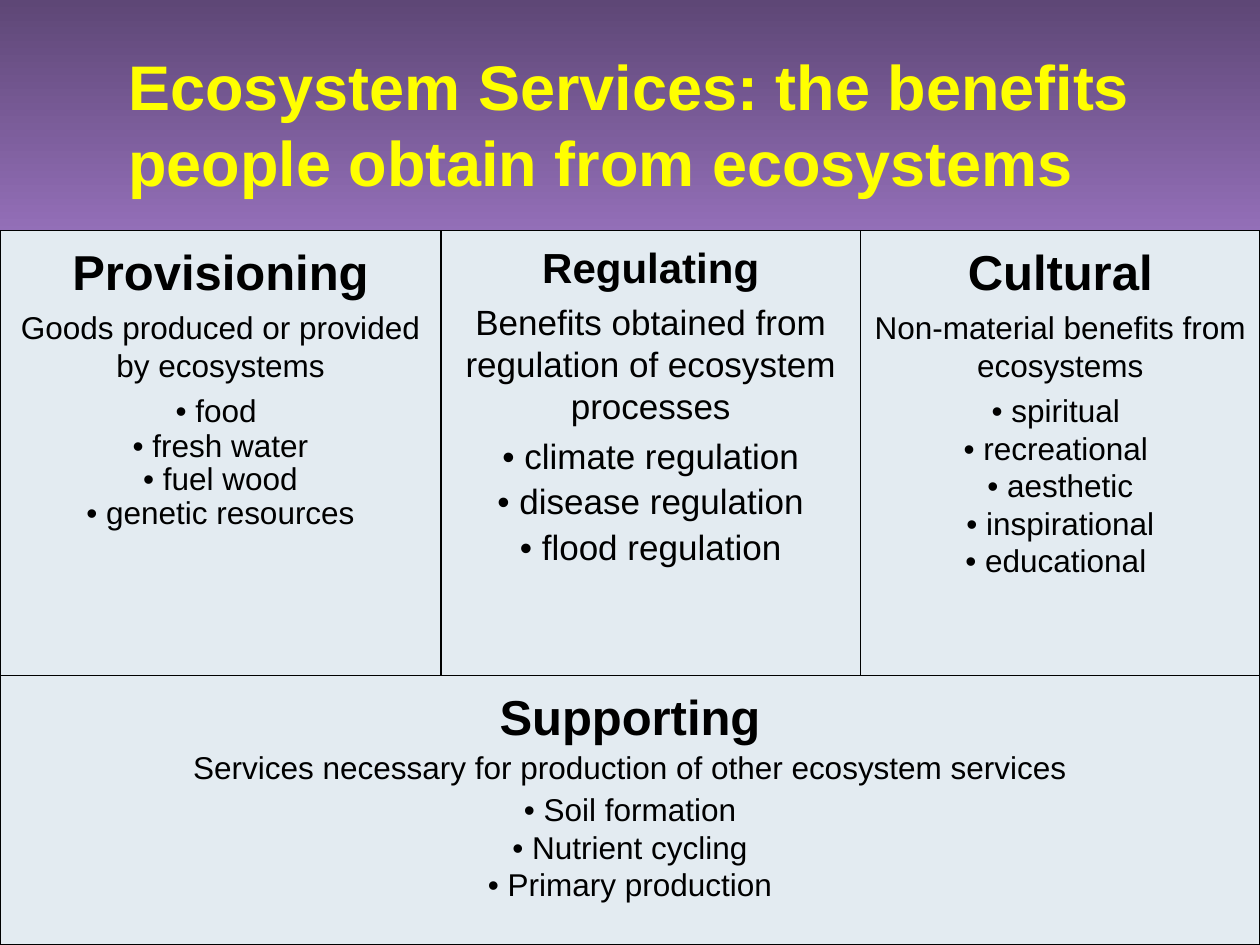
from copy import deepcopy

from pptx import Presentation
from pptx.dml.color import RGBColor
from pptx.enum.shapes import MSO_SHAPE
from pptx.enum.text import MSO_ANCHOR, PP_ALIGN
from pptx.util import Inches, Pt

# Content: heading, summary, bullet items, and (heading, text) point sizes
TITLE = "Ecosystem Services: the benefits people obtain from ecosystems"
REGULATING = ("Regulating", "Benefits obtained from regulation of ecosystem processes",
              ["climate regulation", "disease regulation", "flood regulation"], (24, 20))
PROVISIONING = ("Provisioning", "Goods produced or provided by ecosystems",
                ["food ", "fresh water", "fuel wood", "genetic resources"], (28, 18))
CULTURAL = ("Cultural", "Non-material benefits from ecosystems",
            ["spiritual ", "recreational ", "aesthetic", "inspirational", "educational "], (28, 18))
SUPPORTING = ("Supporting", "Services necessary for production of other ecosystem services",
              ["Soil formation", "Nutrient cycling", "Primary production"], (28, 18))

THEME = {
    "font": "Arial", "title_size": 36, "line": 0.75, "gap": 0.23,
    "title": RGBColor(0xFF, 0xFF, 0x00), "text": RGBColor(0, 0, 0),
    "panel": RGBColor(0xE3, 0xEB, 0xF1),
    "dark": RGBColor(0x5E, 0x47, 0x76), "light": RGBColor(0xCC, 0x99, 0xFF),
}

# Grid edges in inches
X = [0, 3.5, 6.83, 10]
Y = [0, 1.83, 5.36, 7.5]
OVERLAP = 0.22  # the middle panel runs on behind the bottom one

# Panels from back to front: content, left, top, right, bottom,
# line spacing of the summary and of each item
PANELS = [
    (REGULATING, X[1], Y[1], X[2], Y[2] + OVERLAP, [1, 1, 0.9, 0.9]),
    (PROVISIONING, X[0], Y[1], X[1], Y[2], [1, 1, 0.7, 0.7, 0.7]),
    (CULTURAL, X[2], Y[1], X[3], Y[2], [1, 1, 0.8, 0.8, 0.8, 0.8]),
    (SUPPORTING, X[0], Y[2], X[3], Y[3], [0.9, 0.9, 0.8, 0.8]),
]


def style(p, size, color, bold=False):
    p.font.name = THEME["font"]
    p.font.size = Pt(size)
    p.font.bold = bold
    p.font.color.rgb = color


def paint_background(s):
    fill = s.background.fill
    fill.gradient()
    fill.gradient_angle = 270  # top to bottom
    first = fill.gradient_stops[0]
    stops = fill._fill._gradFill.gsLst
    stops.insert(1, deepcopy(stops[0]))
    colors = [THEME["dark"], THEME["light"], THEME["dark"]]
    for stop, pos, color in zip(fill.gradient_stops, [0, 0.5, 1], colors):
        stop.position = pos
        stop.color.rgb = color


def add_title(s):
    left = 0.92
    tf = s.shapes.add_textbox(Inches(left), 0, Inches(X[3] - left), Inches(Y[1])).text_frame
    tf.word_wrap = True
    tf.vertical_anchor = MSO_ANCHOR.MIDDLE
    tf.margin_top = Inches(0.18)
    p = tf.paragraphs[0]
    p.text = TITLE
    style(p, THEME["title_size"], THEME["title"], bold=True)


def add_panel(s, content, left, top, right, bottom, spacing):
    heading, summary, items, (head_size, text_size) = content
    sp = s.shapes.add_shape(MSO_SHAPE.RECTANGLE, Inches(left), Inches(top),
                            Inches(right - left), Inches(bottom - top))
    sp.shadow.inherit = False
    sp.fill.solid()
    sp.fill.fore_color.rgb = THEME["panel"]
    sp.line.color.rgb = THEME["text"]
    sp.line.width = Pt(THEME["line"])

    tf = sp.text_frame
    tf.word_wrap = True
    tf.vertical_anchor = MSO_ANCHOR.TOP
    tf.margin_top = Inches(0.09)
    p = tf.paragraphs[0]
    p.text = heading
    p.alignment = PP_ALIGN.CENTER
    style(p, head_size, THEME["text"], bold=True)
    for text, ratio in zip([summary] + [f"• {item}" for item in items], spacing):
        p = tf.add_paragraph()
        p.text = text
        p.alignment = PP_ALIGN.CENTER
        p.line_spacing = float(ratio)
        p.space_before = Pt(text_size * THEME["gap"])
        style(p, text_size, THEME["text"])


def main():
    prs = Presentation()
    prs.slide_width, prs.slide_height = Inches(X[3]), Inches(Y[3])
    s = prs.slides.add_slide(prs.slide_layouts[6])
    paint_background(s)
    add_title(s)
    for panel in PANELS:
        add_panel(s, *panel)
    prs.save("out.pptx")


if __name__ == "__main__":
    main()
